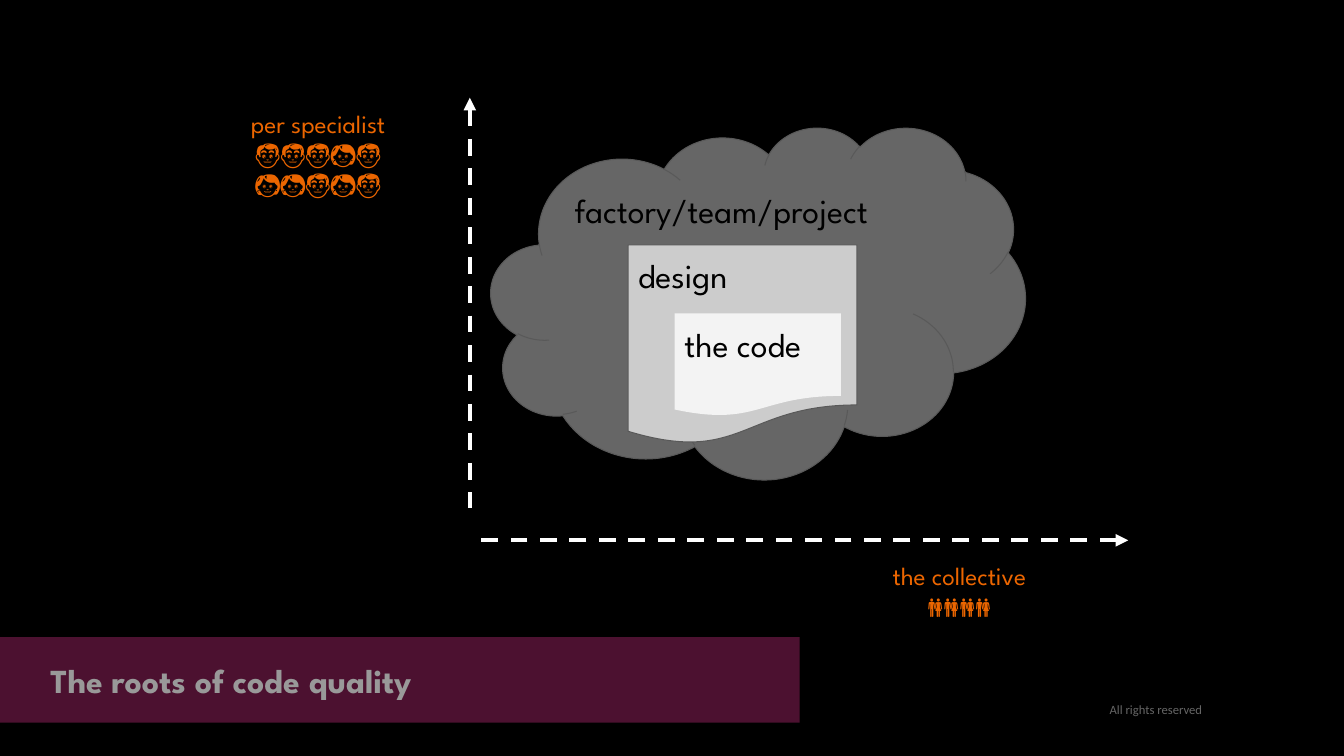
from lxml import etree
from pptx import Presentation
from pptx.dml.color import RGBColor
from pptx.enum.dml import MSO_LINE
from pptx.enum.shapes import MSO_CONNECTOR, MSO_SHAPE
from pptx.enum.text import MSO_ANCHOR, MSO_AUTO_SIZE, PP_ALIGN
from pptx.oxml.ns import qn
from pptx.util import Inches, Pt

BLACK = RGBColor(0x00, 0x00, 0x00)
WHITE = RGBColor(0xFF, 0xFF, 0xFF)
ORANGE = RGBColor(0xEC, 0x66, 0x00)
PLUM = RGBColor(0x4C, 0x11, 0x30)
TITLE_GRAY = RGBColor(0x99, 0x99, 0x99)
DARK_GRAY = RGBColor(0x66, 0x66, 0x66)
OUTLINE_GRAY = RGBColor(0x59, 0x59, 0x59)
MID_GRAY = RGBColor(0xCC, 0xCC, 0xCC)
PALE_GRAY = RGBColor(0xF3, 0xF3, 0xF3)
FONT = "League Spartan"


def prepare_frame(shape, anchor=MSO_ANCHOR.TOP, left=0.1):
    frame = shape.text_frame
    frame.word_wrap = True
    frame.auto_size = MSO_AUTO_SIZE.NONE
    frame.vertical_anchor = anchor
    frame.margin_left = Inches(left)
    frame.margin_top = frame.margin_right = frame.margin_bottom = Inches(0.1)
    return frame


def add_run(paragraph, text, size, color, font=FONT, bold=False):
    run = paragraph.add_run()
    run.text = text
    run.font.name = font
    run.font.size = Pt(size)
    run.font.bold = bold
    run.font.color.rgb = color


def place_title(slide, text):
    title = slide.shapes.title
    title.left, title.top = Inches(0), Inches(6.32)
    title.width, title.height = Inches(7.93), Inches(0.85)
    title.fill.solid()
    title.fill.fore_color.rgb = PLUM
    paragraph = prepare_frame(title, MSO_ANCHOR.MIDDLE, 0.5).paragraphs[0]
    paragraph.alignment = PP_ALIGN.LEFT
    add_run(paragraph, text, 24, TITLE_GRAY, bold=True)


def add_layer(slide, kind, box, text, fill, outline=None):
    shape = slide.shapes.add_shape(kind, *map(Inches, box))
    shape.shadow.inherit = False
    shape.fill.solid()
    shape.fill.fore_color.rgb = fill
    if outline is None:
        shape.line.fill.background()
    else:
        shape.line.color.rgb = outline
        shape.line.width = Pt(0.75)
    paragraph = prepare_frame(shape).paragraphs[0]
    paragraph.alignment = PP_ALIGN.LEFT
    add_run(paragraph, text, 24, BLACK)


def add_axis(slide, tip, foot):
    axis = slide.shapes.add_connector(
        MSO_CONNECTOR.STRAIGHT, *map(Inches, tip + foot))
    axis.line.color.rgb = WHITE
    axis.line.width = Pt(3)
    axis.line.dash_style = MSO_LINE.DASH
    line = axis.line._get_or_add_ln()
    etree.SubElement(line, qn("a:headEnd"), type="triangle")
    etree.SubElement(axis._element.spPr, qn("a:effectLst"))


def add_axis_label(slide, left, top, text, people_rows):
    label = slide.shapes.add_textbox(
        Inches(left), Inches(top), Inches(1.91), Inches(0.76))
    frame = prepare_frame(label)
    caption, people = frame.paragraphs[0], frame.add_paragraph()
    caption.alignment = people.alignment = PP_ALIGN.CENTER
    add_run(caption, text, 18, ORANGE)
    for index, row in enumerate(people_rows):
        if index:
            people.add_line_break()
        add_run(people, row, 18, ORANGE)


def add_rights_note(slide, text):
    note = slide.shapes.add_textbox(
        Inches(10.4), Inches(6.91), Inches(1.62), Inches(0.25))
    paragraph = prepare_frame(note, MSO_ANCHOR.MIDDLE).paragraphs[0]
    paragraph.alignment = PP_ALIGN.RIGHT
    add_run(paragraph, text, 9, DARK_GRAY, font="Calibri")


def main():
    presentation = Presentation()
    presentation.slide_width = Inches(13.33)
    presentation.slide_height = Inches(7.5)
    slide = presentation.slides.add_slide(presentation.slide_layouts[5])
    slide.background.fill.solid()
    slide.background.fill.fore_color.rgb = BLACK

    add_rights_note(slide, "All rights reserved")
    place_title(slide, "The roots of code quality")
    add_layer(slide, MSO_SHAPE.CLOUD, (4.87, 1.26, 5.3, 3.49),
              "factory/team/project", DARK_GRAY, OUTLINE_GRAY)
    add_layer(slide, MSO_SHAPE.FLOWCHART_DOCUMENT, (6.23, 2.43, 2.27, 1.98),
              "design", MID_GRAY, OUTLINE_GRAY)
    add_layer(slide, MSO_SHAPE.FLOWCHART_DOCUMENT, (6.69, 3.11, 1.65, 1.02),
              "the code", PALE_GRAY)
    add_axis(slide, (11.19, 5.36), (4.66, 5.36))
    add_axis_label(slide, 2.2, 0.97, "per specialist", ["👨👨👨👩👨", "👩👩👨👩👨"])
    add_axis(slide, (4.66, 0.97), (4.66, 5.04))
    add_axis_label(slide, 8.56, 5.46, "the collective", ["👫👫👫👫"])

    presentation.save("out.pptx")


if __name__ == "__main__":
    main()
